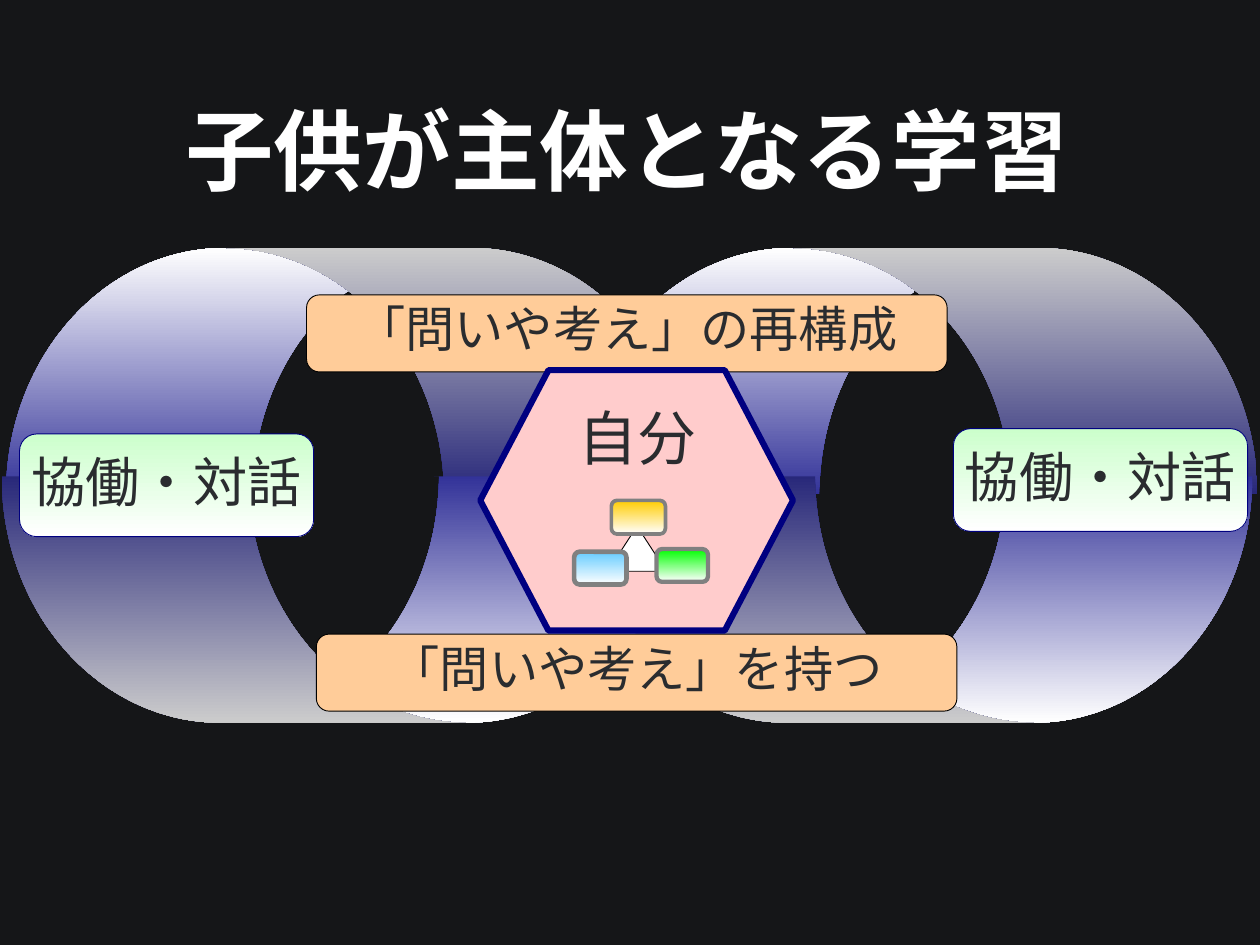
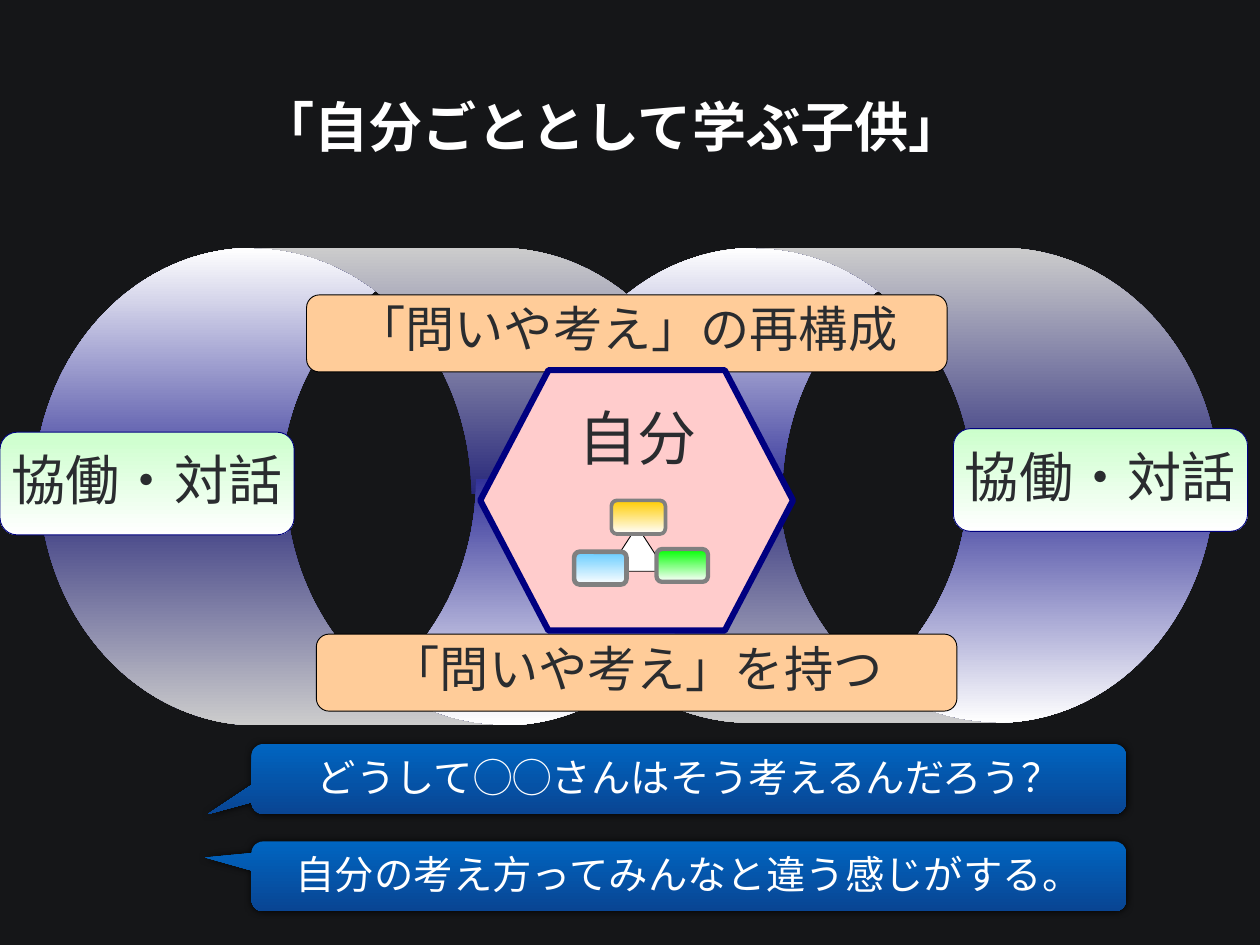
from lxml.etree import SubElement
from pptx import Presentation
from pptx.dml.color import RGBColor
from pptx.enum.shapes import MSO_SHAPE
from pptx.enum.text import MSO_ANCHOR, MSO_AUTO_SIZE, PP_ALIGN
from pptx.oxml import parse_xml
from pptx.oxml.ns import nsdecls, qn
from pptx.util import Inches, Pt

WIDTH, HEIGHT = 14.22, 10.67
FONT = "Noto Sans CJK JP"
BACKGROUND, WHITE, BLACK, INK = "151618", "FFFFFF", "000000", "2A2C2F"
NAVY, GREY, ORANGE, PINK = "000080", "808080", "FFCC99", "FFCCCC"
RING = ("333399", WHITE)
MINT = ("CCFFCC", WHITE)
BLUE = ("0065C1", "094593")
RING_SIZE = (7.77, 2.78)
BANNER_SIZE = (7.23, 0.87)
LABEL_SIZE = (3.32, 1.16)
CALLOUT_SIZE = (9.87, 0.79)

BANNERS = [
    ("「問いや考え」の再構成", 3.46, 3.33),
    ("「問いや考え」を持つ", 3.57, 7.16),
]
MODEL_BLOCKS = [
    ((6.9, 5.65, 0.61, 0.38), "FFCC00", 3),
    ((7.41, 6.2, 0.58, 0.37), "00FF00", 3.5),
    ((6.48, 6.23, 0.59, 0.37), "66CCFF", 3.75),
]
RIGHT_LABEL = (10.76, 4.84)
PAGES = [
    {
        "title": ("子供が主体となる学習", 1.99, 1.03, 72),
        "rings": [((6.42, 2.8), (6.42, 5.38)), ((0.02, 2.8), (0.02, 5.38))],
        "labels": [RIGHT_LABEL, (0.22, 4.9)],
        "callouts": [],
    },
    {
        "title": ("「自分ごととして学ぶ子供」", 2.84, 1.01, 44),
        "rings": [((6, 2.8), (6, 5.38)), ((0.33, 2.8), (0.44, 5.41))],
        "labels": [RIGHT_LABEL, (0, 4.88)],
        "callouts": [
            ("どうして◯◯さんはそう考えるんだろう？", 8.4, (-0.55, 0.502)),
            ("自分の考え方ってみんなと違う感じがする。", 9.5, (-0.553, -0.269)),
        ],
    },
]


def color(value):
    return RGBColor.from_string(value)


def paint(fill, value):
    if isinstance(value, str):
        fill.solid()
        fill.fore_color.rgb = color(value)
        return
    fill.gradient()
    fill.gradient_angle = 270
    for stop, shade in zip(fill.gradient_stops, value):
        stop.color.rgb = color(shade)


def add_form(parent, kind, place, fill, line=None, adjust=(), rotation=0):
    form = parent.shapes.add_shape(kind, *map(Inches, place))
    form.shadow.inherit = False
    form.rotation = rotation
    for index, amount in enumerate(adjust):
        form.adjustments[index] = amount
    paint(form.fill, fill)
    if line:
        form.line.color.rgb = color(line[0])
        form.line.width = Pt(line[1])
    else:
        form.line.fill.background()
    return form


def write(box, text, size, ink=INK, bold=False, align=PP_ALIGN.CENTER,
          anchor=MSO_ANCHOR.TOP, margins=(0.1, 0.05, 0.1, 0.05), wrap=True,
          spacing=None, grow=MSO_AUTO_SIZE.NONE):
    frame = box.text_frame
    frame.auto_size, frame.word_wrap = grow, wrap
    frame.vertical_anchor = anchor
    (frame.margin_left, frame.margin_top,
     frame.margin_right, frame.margin_bottom) = map(Inches, margins)
    para = frame.paragraphs[0]
    para.alignment = align
    if spacing:
        para.line_spacing = Pt(spacing)
    span = para.add_run()
    span.text = text
    span.font.size, span.font.bold = Pt(size), bold
    span.font.color.rgb = color(ink)
    span.font.name = FONT
    SubElement(span.font._element, qn("a:ea"), typeface=FONT)


def add_title(page, text, left, top, size):
    title = page.shapes.title
    title.left, title.top = Inches(left), Inches(top)
    title.width, title.height = Inches(WIDTH - left), Inches(0.89)
    write(title, text, size, ink=WHITE, bold=True, align=PP_ALIGN.LEFT)


def add_ring(page, upper, lower):
    ring = page.shapes.add_group_shape()
    for corner, bend, rotation in ((upper, 1.034, 180), (lower, 1.041, 0)):
        add_form(ring, MSO_SHAPE.CURVED_UP_ARROW, corner + RING_SIZE, RING,
                 adjust=(bend, bend, 0), rotation=rotation)


def add_banner(page, text, left, top):
    banner = add_form(page, MSO_SHAPE.ROUNDED_RECTANGLE, (left, top) + BANNER_SIZE,
                      ORANGE, (BLACK, 0.75))
    write(banner, text, 40, anchor=MSO_ANCHOR.MIDDLE, wrap=False,
          margins=(0.1, 0.28, 0.1, 0.05), spacing=23)


def add_self(page):
    add_form(page, MSO_SHAPE.HEXAGON, (5.42, 4.18, 3.53, 2.94), PINK, (NAVY, 5),
             adjust=(0.262, 1.155))
    box = page.shapes.add_textbox(*map(Inches, (5.64, 4.48, 3.1, 0.91)))
    write(box, "自分", 48, grow=MSO_AUTO_SIZE.SHAPE_TO_FIT_TEXT)
    model = page.shapes.add_group_shape()
    add_form(model, MSO_SHAPE.ISOSCELES_TRIANGLE, (6.86, 5.94, 0.66, 0.51),
             WHITE, (BLACK, 0.75))
    for place, shade, weight in MODEL_BLOCKS:
        add_form(model, MSO_SHAPE.ROUNDED_RECTANGLE, place, (shade, WHITE),
                 (GREY, weight))


def add_label(page, corner):
    label = add_form(page, MSO_SHAPE.ROUNDED_RECTANGLE, corner + LABEL_SIZE,
                     MINT, (NAVY, 0.75))
    write(label, "協働・対話", 44, anchor=MSO_ANCHOR.MIDDLE, wrap=False,
          margins=(0.1, 0.31, 0.1, 0.05), spacing=27)


def add_callout(page, text, top, tip):
    callout = add_form(page, MSO_SHAPE.ROUNDED_RECTANGULAR_CALLOUT,
                       (2.84, top) + CALLOUT_SIZE, BLUE, adjust=tip + (0.167,))
    effects = callout._element.spPr.find(qn("a:effectLst"))
    effects.append(parse_xml(
        f'<a:outerShdw {nsdecls("a")} blurRad="{Pt(6)}" dist="0" dir="18900000">'
        f'<a:srgbClr val="{BLACK}"><a:alpha val="80000"/></a:srgbClr></a:outerShdw>'))
    write(callout, text, 32, ink=WHITE, margins=(0.06,) * 4)


def main():
    deck = Presentation()
    deck.slide_width, deck.slide_height = Inches(WIDTH), Inches(HEIGHT)
    paint(deck.slide_master.background.fill, BACKGROUND)
    for content in PAGES:
        page = deck.slides.add_slide(deck.slide_layouts.get_by_name("Title Only"))
        add_title(page, *content["title"])
        for upper, lower in content["rings"]:
            add_ring(page, upper, lower)
        for banner in BANNERS:
            add_banner(page, *banner)
        add_self(page)
        for corner in content["labels"]:
            add_label(page, corner)
        for callout in content["callouts"]:
            add_callout(page, *callout)
    deck.save("out.pptx")


if __name__ == "__main__":
    main()
